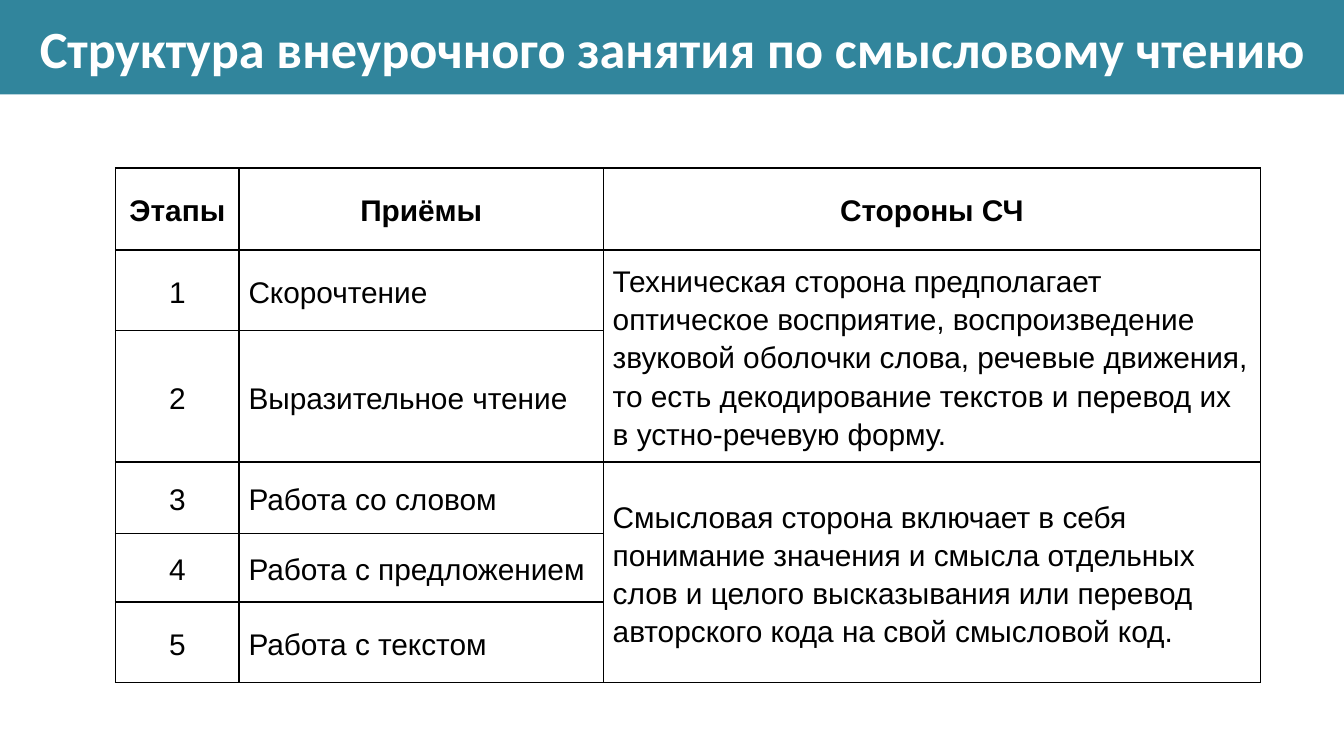
from lxml.etree import SubElement
from pptx import Presentation
from pptx.dml.color import RGBColor
from pptx.enum.shapes import MSO_SHAPE
from pptx.enum.text import MSO_ANCHOR, PP_ALIGN
from pptx.oxml.ns import qn
from pptx.util import Inches, Pt

COLORS = {"banner": "31859C", "title": "FFFFFF", "text": "000000", "border": "000000"}

SLIDE_WIDTH = 10
SLIDE_HEIGHT = SLIDE_WIDTH * 9 / 16
BANNER_SHARE = 1 / 8  # of the slide height

TITLE = "Структура внеурочного занятия по смысловому чтению"
HEADINGS = ["Этапы", "Приёмы", "Стороны СЧ"]
TECHNIQUES = [
    "Скорочтение",
    "Выразительное чтение",
    "Работа со словом",
    "Работа с предложением",
    "Работа с текстом",
]
# First stage, last stage, side of reading they share
SIDES = [
    (1, 2, "Техническая сторона предполагает оптическое восприятие, воспроизведение "
           "звуковой оболочки слова, речевые движения, то есть декодирование текстов "
           "и перевод их в устно-речевую форму."),
    (3, 5, "Смысловая сторона включает в себя понимание значения и смысла отдельных "
           "слов и целого высказывания или перевод авторского кода на свой смысловой код."),
]

TABLE_LEFT, TABLE_TOP = 0.86, 1.25
COLUMN_WIDTHS = [0.92, 2.71, 4.89]
ROW_HEIGHTS = [0.61, 0.6, 0.98, 0.53, 0.51, 0.6]


def add_text(paragraph, text, font, size, color, bold=False, align=PP_ALIGN.LEFT):
    paragraph.alignment = align
    run = paragraph.add_run()
    run.text = text
    run.font.name = font
    run.font.size = Pt(size)
    run.font.bold = bold
    run.font.color.rgb = RGBColor.from_string(COLORS[color])


def add_banner(slide, text):
    banner = slide.shapes.add_shape(
        MSO_SHAPE.RECTANGLE, 0, 0,
        Inches(SLIDE_WIDTH), Inches(SLIDE_HEIGHT * BANNER_SHARE))
    banner.shadow.inherit = False
    banner.fill.solid()
    banner.fill.fore_color.rgb = RGBColor.from_string(COLORS["banner"])
    banner.line.fill.background()
    frame = banner.text_frame
    frame.word_wrap = True
    frame.vertical_anchor = MSO_ANCHOR.MIDDLE
    add_text(frame.paragraphs[0], text, "Calibri", 28, "title", True, PP_ALIGN.CENTER)


def format_cell(cell):
    cell.vertical_anchor = MSO_ANCHOR.MIDDLE
    cell.margin_left = cell.margin_right = Inches(0.07)
    cell.margin_top = cell.margin_bottom = 0
    # Borders come before the fill in the cell properties
    properties = cell._tc.get_or_add_tcPr()
    for side in ("a:lnL", "a:lnR", "a:lnT", "a:lnB"):
        line = SubElement(properties, qn(side), w=str(Pt(1)))
        fill = SubElement(line, qn("a:solidFill"))
        SubElement(fill, qn("a:srgbClr"), val=COLORS["border"])
    cell.fill.background()


def fill_cell(cell, text, bold=False, align=PP_ALIGN.LEFT):
    paragraph = cell.text_frame.paragraphs[0]
    paragraph.line_spacing = 1.15
    add_text(paragraph, text, "Arial", 16, "text", bold, align)


def add_grid(slide):
    frame = slide.shapes.add_table(
        len(ROW_HEIGHTS), len(COLUMN_WIDTHS), Inches(TABLE_LEFT), Inches(TABLE_TOP),
        Inches(sum(COLUMN_WIDTHS)), Inches(sum(ROW_HEIGHTS)))
    grid = frame.table
    grid.first_row = grid.horz_banding = False
    for column, width in zip(grid.columns, COLUMN_WIDTHS):
        column.width = Inches(width)
    for row, height in zip(grid.rows, ROW_HEIGHTS):
        row.height = Inches(height)
    for cell in grid.iter_cells():
        format_cell(cell)
    return grid


def add_stages(slide):
    stages = add_grid(slide)
    for column, heading in enumerate(HEADINGS):
        fill_cell(stages.cell(0, column), heading, True, PP_ALIGN.CENTER)
    for stage, technique in enumerate(TECHNIQUES, start=1):
        fill_cell(stages.cell(stage, 0), str(stage), align=PP_ALIGN.CENTER)
        fill_cell(stages.cell(stage, 1), technique)
    # One description spans the stages that share a side
    for first, last, side in SIDES:
        stages.cell(first, 2).merge(stages.cell(last, 2))
        fill_cell(stages.cell(first, 2), side)


def main():
    presentation = Presentation()
    presentation.slide_width = Inches(SLIDE_WIDTH)
    presentation.slide_height = Inches(SLIDE_HEIGHT)
    slide = presentation.slides.add_slide(presentation.slide_layouts[6])
    add_banner(slide, TITLE)
    add_stages(slide)
    presentation.save("out.pptx")


if __name__ == "__main__":
    main()
